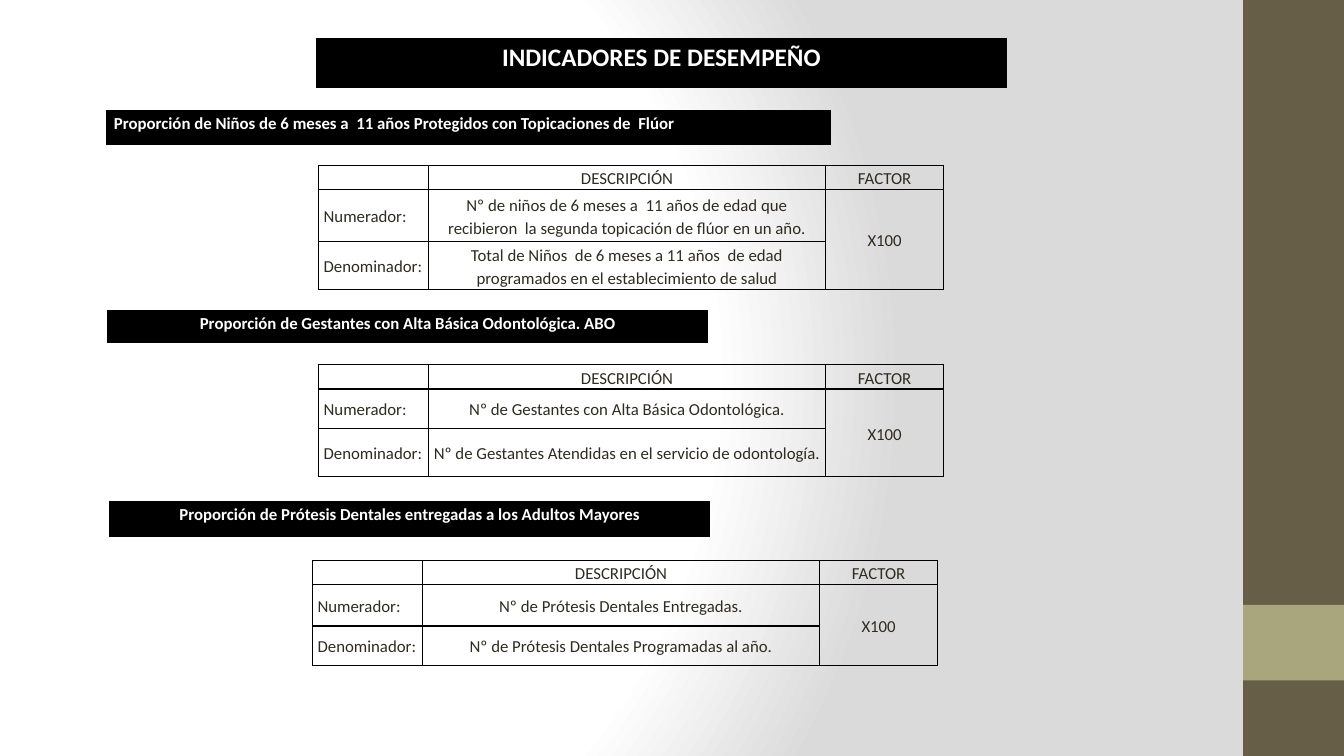
import pptx
import pptx.util
import pptx.oxml
import pptx.oxml.ns
import pptx.dml.color
import pptx.enum.shapes
import pptx.enum.text

Inches = pptx.util.Inches
LEFT = pptx.enum.text.PP_ALIGN.LEFT
MID = pptx.enum.text.PP_ALIGN.CENTER
TOP = pptx.enum.text.MSO_ANCHOR.TOP
CORE = pptx.enum.text.MSO_ANCHOR.MIDDLE
INK, WHITE, BLACK, GREY = "2F2B20", "FFFFFF", "000000", "DADADA"

BANDS = [(0, 7.5, "675E47"), (6, 0.75, "A9A57C")]
BARS = [
    ("INDICADORES DE DESEMPEÑO", (3.14, 0.38, 6.84, 0.49), 18, MID),
    ("Proporción de Niños de 6 meses a  11 años Protegidos con Topicaciones de  Flúor",
     (1.06, 1.1, 7.18, 0.33), 12, LEFT),
    ("Proporción de Gestantes con Alta Básica Odontológica. ABO",
     (1.07, 3.08, 5.95, 0.32), 12, MID),
    ("Proporción de Prótesis Dentales entregadas a los Adultos Mayores",
     (1.09, 4.98, 5.95, 0.34), 12, MID),
]
COLS = [1.09, 3.94, 1.17]
GRIDS = [
    (3.16, 1.64, [0.24, 0.52, 0.47],
     "Nº de niños de 6 meses a  11 años de edad que recibieron  la segunda topicación de flúor en un año.",
     "Total de Niños  de 6 meses a 11 años  de edad programados en el establecimiento de salud"),
    (3.16, 3.62, [0.24, 0.39, 0.48],
     "Nº de Gestantes con Alta Básica Odontológica.",
     "Nº de Gestantes Atendidas en el servicio de odontología."),
    (3.1, 5.56, [0.24, 0.41, 0.39],
     "Nº de Prótesis Dentales Entregadas.",
     "Nº de Prótesis Dentales Programadas al año."),
]


def hue(code):
    return pptx.dml.color.RGBColor.from_string(code)


def node(xml):
    return pptx.oxml.parse_xml(xml.replace(">", f" {pptx.oxml.ns.nsdecls('a')}>", 1))


def write(cell, text, size=12, color=INK, bold=False, align=MID, anchor=CORE, pad=0.05):
    cell.margin_left = cell.margin_right = Inches(pad)
    cell.margin_top = cell.margin_bottom = 0
    cell.vertical_anchor = anchor
    para = cell.text_frame.paragraphs[0]
    para.alignment, para.line_spacing = align, 1.15
    if not text:
        para._p.append(node(f'<a:endParaRPr sz="{size * 100}"></a:endParaRPr>'))
        return
    run = para.add_run()
    run.text = text
    font = run.font
    font.name, font.size, font.bold = "Calibri", pptx.util.Pt(size), bold
    font.color.rgb = hue(color)


def edge(cell):
    props = cell._tc.get_or_add_tcPr()
    for spot, side in enumerate("LRTB"):
        props.insert(spot, node(
            f'<a:ln{side} w="12700"><a:solidFill><a:srgbClr val="{BLACK}"/></a:solidFill></a:ln{side}>'))


def grid(slide, left, top, cols, rows, fill=None):
    box = [Inches(n) for n in (left, top, sum(cols), sum(rows))]
    table = slide.shapes.add_table(len(rows), len(cols), *box).table
    table.first_row = table.horz_banding = False
    for col, wide in zip(table.columns, cols):
        col.width = Inches(wide)
    for row, high in zip(table.rows, rows):
        row.height = Inches(high)
    for cell in table.iter_cells():
        if fill:
            cell.fill.solid()
            cell.fill.fore_color.rgb = hue(fill)
        else:
            cell.fill.background()
        edge(cell)
    return table


def shade(slide):
    slide.background.fill.solid()
    props = slide._element.xpath(".//p:bgPr")[0]
    stops = "".join(f'<a:gs pos="{pos}"><a:srgbClr val="{code}"/></a:gs>'
                    for pos, code in [(0, WHITE), (75000, WHITE), (100000, GREY)])
    props.replace(props[0], node(
        f'<a:gradFill rotWithShape="1"><a:gsLst>{stops}</a:gsLst><a:path path="circle">'
        '<a:fillToRect l="20000" t="50000" r="100000" b="50000"/></a:path></a:gradFill>'))


def main():
    deck = pptx.Presentation()
    deck.slide_width, deck.slide_height = Inches(13.33), Inches(7.5)
    slide = deck.slides.add_slide(deck.slide_layouts[6])
    shade(slide)
    for top, high, code in BANDS:
        band = slide.shapes.add_shape(pptx.enum.shapes.MSO_SHAPE.RECTANGLE,
                                      Inches(12.33), Inches(top), Inches(1), Inches(high))
        band.shadow.inherit = False
        band.fill.solid()
        band.fill.fore_color.rgb = hue(code)
        band.line.fill.background()
    for text, (left, top, wide, high), size, align in BARS:
        bar = grid(slide, left, top, [wide], [high], BLACK)
        write(bar.cell(0, 0), text, size=size, color=WHITE, bold=True,
              align=align, anchor=TOP, pad=0.07)
    for left, top, rows, upper, lower in GRIDS:
        table = grid(slide, left, top, COLS, rows)
        table.cell(1, 2).merge(table.cell(2, 2))
        lines = [("", "DESCRIPCIÓN", "FACTOR"),
                 ("Numerador:", upper, "X100"),
                 ("Denominador:", lower, "")]
        for r, line in enumerate(lines):
            for c, text in enumerate(line):
                write(table.cell(r, c), text, align=MID if c else LEFT)
    deck.save("out.pptx")


if __name__ == "__main__":
    main()
